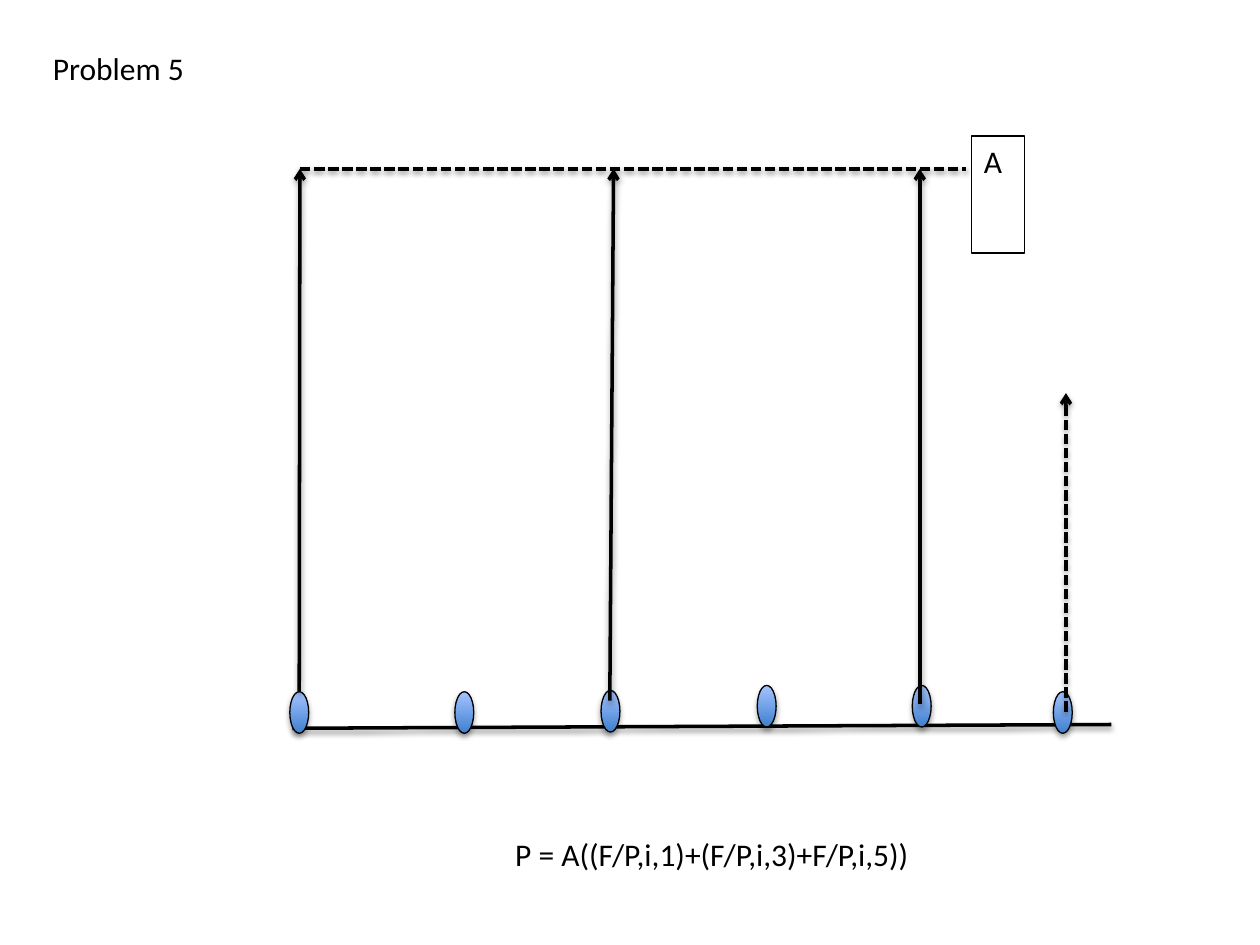
from pptx import Presentation
from pptx.util import Inches, Pt
from pptx.dml.color import RGBColor
from pptx.enum.dml import MSO_LINE as Dash
from pptx.enum.shapes import MSO_CONNECTOR as Conn, MSO_SHAPE as Kind
from pptx.enum.text import MSO_ANCHOR as Anchor, MSO_AUTO_SIZE as Fit, PP_ALIGN as Align
from pptx.oxml import parse_xml
from pptx.oxml.ns import nsdecls


def rgb(code):
    return RGBColor.from_string(code)


def shade(item, dist, alpha):
    item.element.spPr.append(parse_xml(
        f'<a:effectLst {nsdecls("a")}><a:outerShdw blurRad="{Pt(3.1)}" dist="{Pt(dist)}" '
        f'dir="5400000" rotWithShape="0"><a:srgbClr val="000000">'
        f'<a:alpha val="{alpha}000"/></a:srgbClr></a:outerShdw></a:effectLst>'))


deck = Presentation()
deck.slide_width, deck.slide_height = Inches(10), Inches(7.5)
slide = deck.slides.add_slide(deck.slide_layouts[5])
shapes = slide.shapes

base = shapes.add_connector(
    Conn.STRAIGHT, Inches(2.32), Inches(5.78), Inches(8.82), Inches(5.75))
lines = [(base, False, False)]

dots = []
for left, top in [(2.3, 5.49), (3.61, 5.49), (4.77, 5.48),
                  (6.01, 5.44), (7.24, 5.44), (8.36, 5.49)]:
    dot = shapes.add_shape(
        Kind.OVAL, Inches(left), Inches(top), Inches(0.15), Inches(0.33))
    dot.fill.gradient()
    dot.fill.gradient_angle = 90
    for stop, code in zip(dot.fill.gradient_stops, ["3F80CE", "A4C4FF"]):
        stop.color.rgb = rgb(code)
    dot.line.color.rgb = rgb("000000")
    dot.line.width = Pt(0.75)
    shade(dot, 1.8, 35)
    dots.append(dot)

label = shapes.add_shape(
    Kind.RECTANGLE, Inches(7.71), Inches(1.08), Inches(0.42), Inches(0.93))
label.shadow.inherit = False
label.fill.background()
label.line.color.rgb = rgb("000000")
label.line.width = Pt(0.75)

for x1, y1, x2, y2, dashed, arrow in [
        (8.46, 5.65, 8.46, 3.12, True, True),
        (4.84, 5.56, 4.87, 1.34, False, True),
        (7.3, 5.59, 7.3, 1.34, False, True),
        (2.38, 1.34, 7.67, 1.34, True, False),
        (2.38, 5.49, 2.38, 1.34, False, True)]:
    line = shapes.add_connector(
        Conn.STRAIGHT, Inches(x1), Inches(y1), Inches(x2), Inches(y2))
    lines.append((line, dashed, arrow))
line.begin_connect(dots[0], 0)

for line, dashed, arrow in lines:
    line.line.color.rgb = rgb("000000")
    line.line.width = Pt(2)
    if dashed:
        line.line.dash_style = Dash.SQUARE_DOT
    if arrow:
        line.line._get_or_add_ln().append(
            parse_xml(f'<a:tailEnd {nsdecls("a")} type="arrow"/>'))
    shade(line, 1.6, 38)

title = shapes.title
title.left, title.top = Inches(0.32), Inches(0.34)
title.width, title.height = Inches(1.26), Inches(0.4)
sum_box = shapes.add_textbox(Inches(3.99), Inches(6.58), Inches(3.49), Inches(0.4))

font = {"size": Pt(18), "name": "Calibri"}
for box, text, wrap in [
        (title, "Problem 5", False),
        (label, "A", True),
        (sum_box, "P = A((F/P,i,1)+(F/P,i,3)+F/P,i,5))", False)]:
    frame = box.text_frame
    frame.text = text
    form = {"word_wrap": wrap, "vertical_anchor": Anchor.TOP, "auto_size": Fit.NONE}
    for key, value in form.items():
        setattr(frame, key, value)
    para = frame.paragraphs[0]
    para.alignment = Align.LEFT
    run = para.runs[0]
    for key, value in font.items():
        setattr(run.font, key, value)
    run.font.color.rgb = rgb("000000")

deck.save("out.pptx")
